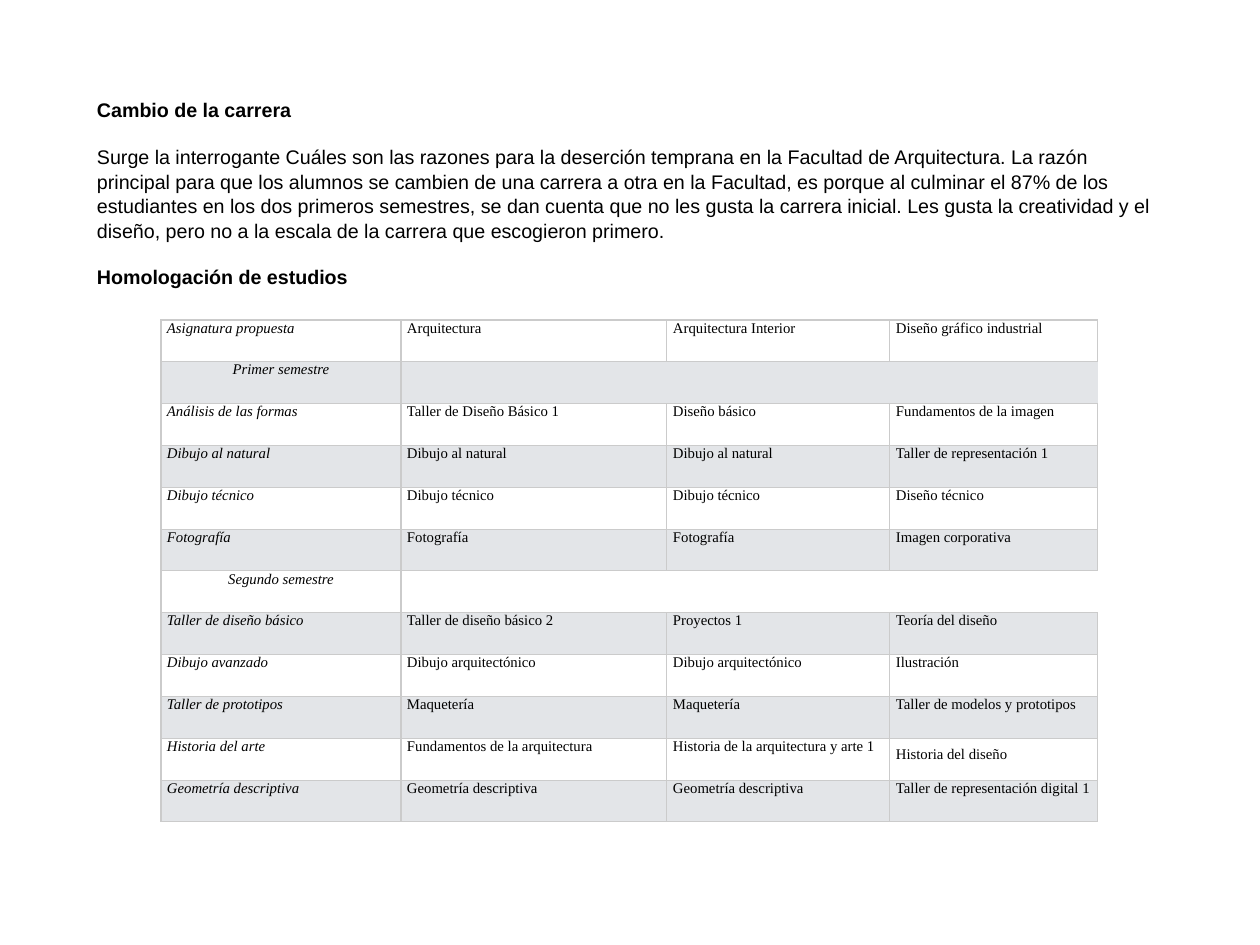
from lxml.etree import SubElement
from pptx import Presentation
from pptx.dml.color import RGBColor
from pptx.enum.text import MSO_ANCHOR as Anchor, MSO_AUTO_SIZE as AutoSize, PP_ALIGN as Align
from pptx.oxml.ns import qn
from pptx.util import Emu, Pt

EMU_PER_PX = 10320
BLACK, WHITE, BAND, RULE = "000000", "FFFFFF", "E3E5E8", "CBCBCB"
COLUMN_WIDTHS = (240, 266, 223, 208)

CAREER_CHANGE = (
    ("Cambio de la carrera", True),
    ("Surge la interrogante Cuáles son las razones para la deserción temprana en la Facultad "
     "de Arquitectura. La razón principal para que los alumnos se cambien de una carrera a otra "
     "en la Facultad, es porque al culminar el 87% de los estudiantes en los dos primeros "
     "semestres, se dan cuenta que no les gusta la carrera inicial. Les gusta la creatividad y "
     "el diseño, pero no a la escala de la carrera que escogieron primero.", False),
    ("Homologación de estudios", True),
)

SUBJECTS = (
    ("Asignatura propuesta", "Arquitectura", "Arquitectura Interior", "Diseño gráfico industrial"),
    ("Primer semestre",),
    ("Análisis de las formas", "Taller de Diseño Básico 1", "Diseño básico",
     "Fundamentos de la imagen"),
    ("Dibujo al natural", "Dibujo al natural", "Dibujo al natural", "Taller de representación 1"),
    ("Dibujo técnico", "Dibujo técnico", "Dibujo técnico", "Diseño técnico"),
    ("Fotografía", "Fotografía", "Fotografía", "Imagen corporativa"),
    ("Segundo semestre",),
    ("Taller de diseño básico", "Taller de diseño básico 2", "Proyectos 1", "Teoría del diseño"),
    ("Dibujo avanzado", "Dibujo arquitectónico", "Dibujo arquitectónico", "Ilustración"),
    ("Taller de prototipos", "Maquetería", "Maquetería", "Taller de modelos y prototipos"),
    ("Historia del arte", "Fundamentos de la arquitectura",
     "Historia de la arquitectura y arte 1", "Historia del diseño"),
    ("Geometría descriptiva", "Geometría descriptiva", "Geometría descriptiva",
     "Taller de representación digital 1"),
)


def px(length):
    return Emu(length * EMU_PER_PX)


def color(hex_code):
    return RGBColor.from_string(hex_code)


def style_run(run, font_name, size, bold=False, italic=False):
    font = run.font
    font.name, font.size = font_name, Pt(size)
    font.bold, font.italic = bold, italic
    font.color.rgb = color(BLACK)


def set_margins(holder, side, end):
    holder.margin_left = holder.margin_right = px(side)
    holder.margin_top = holder.margin_bottom = px(end)


def place_explanation(explanation, left, top, width, height):
    explanation.left, explanation.top = px(left), px(top)
    explanation.width, explanation.height = px(width), px(height)
    frame = explanation.text_frame
    frame.word_wrap = True
    frame.auto_size = AutoSize.NONE
    frame.vertical_anchor = Anchor.MIDDLE
    set_margins(frame, 5, 5)
    frame.text = "\n".join(wording for wording, _ in CAREER_CHANGE)
    for paragraph, (_, bold) in zip(frame.paragraphs, CAREER_CHANGE):
        paragraph.space_before = Pt(18)
        paragraph.line_spacing = 1.04
        properties = paragraph._p.get_or_add_pPr()
        properties.set("marL", "0")
        properties.set("indent", "0")
        SubElement(properties, qn("a:buNone"))
        style_run(paragraph.runs[0], "Arial", 16, bold=bold)


def draw_borders(cell, visible_sides):
    properties = cell._tc.get_or_add_tcPr()
    for side in "LRTB":
        line = SubElement(properties, qn(f"a:ln{side}"), w=str(Pt(1)))
        if side in visible_sides:
            fill = SubElement(line, qn("a:solidFill"))
            SubElement(fill, qn("a:srgbClr"), val=RULE)
        else:
            SubElement(line, qn("a:noFill"))


def fill_subject_cell(cell, subject, is_proposed, is_semester):
    cell.text = subject
    paragraph = cell.text_frame.paragraphs[0]
    style_run(paragraph.runs[0], "Times New Roman", 12, italic=is_proposed)
    if is_semester:
        paragraph.alignment = Align.CENTER
    if subject == "Historia del diseño":
        paragraph.line_spacing = 1.5


def place_subjects(slide, left, top, height):
    table = slide.shapes.add_table(
        len(SUBJECTS), len(COLUMN_WIDTHS), px(left), px(top), px(sum(COLUMN_WIDTHS)), px(height)
    ).table
    table.first_row = table.horz_banding = False
    for column, width in zip(table.columns, COLUMN_WIDTHS):
        column.width = px(width)
    for row, subjects in enumerate(SUBJECTS):
        for column in range(len(COLUMN_WIDTHS)):
            cell = table.cell(row, column)
            set_margins(cell, 6, 0)
            if column < len(subjects):
                fill_subject_cell(cell, subjects[column], column == 0, len(subjects) == 1)
                draw_borders(cell, "LRTB")
            else:
                draw_borders(cell, "LTB" if column == 1 else "TB")
            cell.fill.solid()
            cell.fill.fore_color.rgb = color(BAND if row % 2 else WHITE)


def main():
    deck = Presentation()
    deck.slide_width, deck.slide_height = px(1260), px(945)
    slide = deck.slides.add_slide(deck.slide_layouts[1])
    unused_title = slide.shapes.title._element
    unused_title.getparent().remove(unused_title)
    place_explanation(slide.placeholders[1], 92, 92, 1076, 202)
    place_subjects(slide, 161, 320, 502)
    deck.save("out.pptx")


if __name__ == "__main__":
    main()
